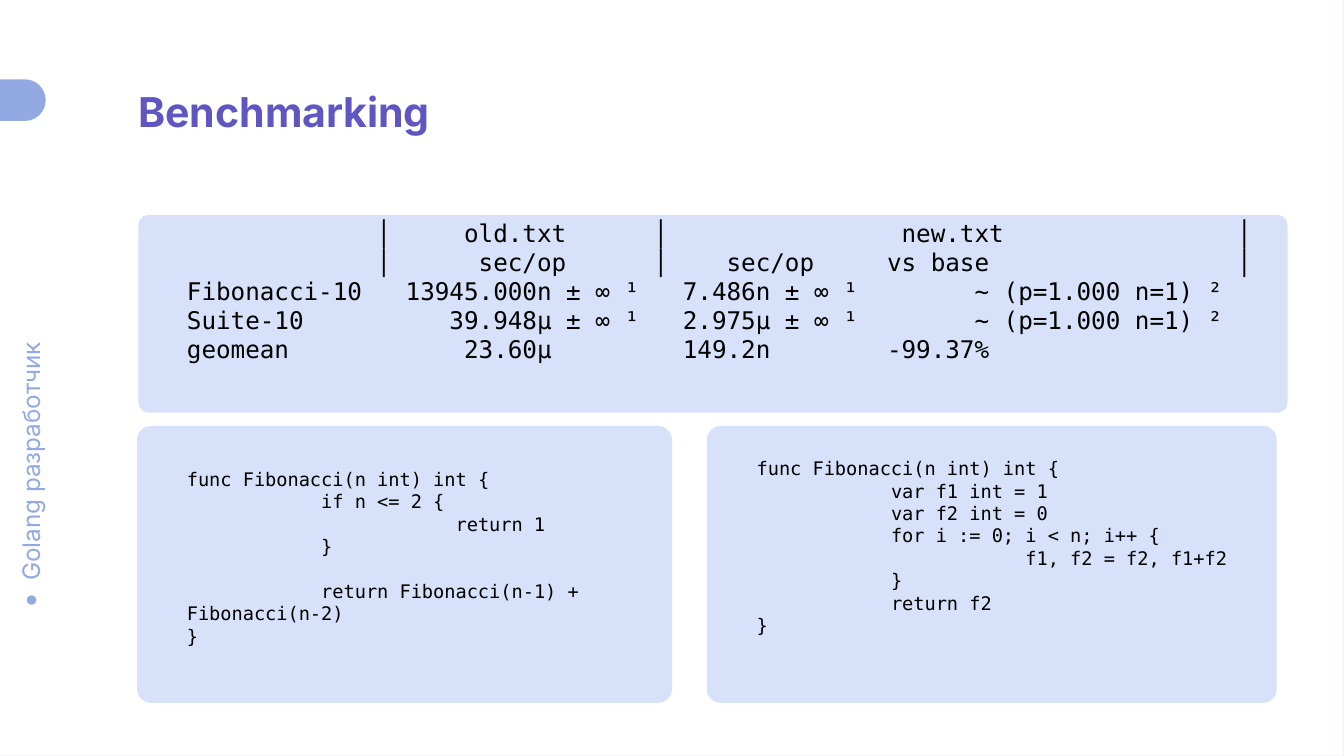
from lxml.etree import SubElement
from pptx import Presentation
from pptx.dml.color import RGBColor
from pptx.enum.shapes import MSO_SHAPE
from pptx.enum.text import MSO_ANCHOR, PP_ALIGN
from pptx.oxml.ns import qn
from pptx.util import Inches, Pt

PURPLE, PERIWINKLE, PANEL = "6056C2", "92A9E2", "D7E1F9"
PAGE, WHITE, BLACK = "F1F4FF", "FFFFFF", "000000"
TITLE_FORMAT = {"name": "Inter", "size": Pt(22), "bold": True}
SIDE_FORMAT = {"name": "Inter", "size": Pt(13), "bold": False}
RESULT_FORMAT = {"name": "DejaVu Sans Mono", "size": Pt(13), "bold": False}
CODE_FORMAT = {"name": "DejaVu Sans Mono", "size": Pt(10), "bold": False}
BLANK_LINE = Pt(12)
TAB_STOPS = (1, 2)

RESULTS = """\
             │     old.txt      │                new.txt                │
             │      sec/op      │    sec/op     vs base                 │
Fibonacci-10   13945.000n ± ∞ ¹   7.486n ± ∞ ¹        ~ (p=1.000 n=1) ²
Suite-10          39.948µ ± ∞ ¹   2.975µ ± ∞ ¹        ~ (p=1.000 n=1) ²
geomean            23.60µ         149.2n        -99.37%"""

RECURSIVE_CODE = """\
func Fibonacci(n int) int {
\tif n <= 2 {
\t\treturn 1
\t}

\treturn Fibonacci(n-1) + Fibonacci(n-2)
}"""

ITERATIVE_CODE = """\
func Fibonacci(n int) int {
\tvar f1 int = 1
\tvar f2 int = 0
\tfor i := 0; i < n; i++ {
\t\tf1, f2 = f2, f1+f2
\t}
\treturn f2
}"""


def paint(color_format, color):
    """Apply a hex colour to a colour format."""
    color_format.rgb = RGBColor.from_string(color)


def set_attributes(target, values):
    """Set every attribute named in a dict."""
    for name, value in values.items():
        setattr(target, name, value)


def set_frame(frame, anchor, left, top, right, bottom):
    """Set wrapping, anchor and margins in inches."""
    set_attributes(frame, {
        "word_wrap": True, "vertical_anchor": anchor,
        "margin_left": Inches(left), "margin_top": Inches(top),
        "margin_right": Inches(right), "margin_bottom": Inches(bottom),
    })


def add_tab_stops(paragraph):
    """Add the left tab stops that indent code."""
    stops = SubElement(paragraph._p.get_or_add_pPr(), qn("a:tabLst"))
    for position in TAB_STOPS:
        SubElement(stops, qn("a:tab"), pos=str(Inches(position)), algn="l")


def write(paragraph, text, font_format, color):
    """Write one left-aligned run of formatted text."""
    paragraph.alignment = PP_ALIGN.LEFT
    run = paragraph.add_run()
    run.text = text
    set_attributes(run.font, font_format)
    paint(run.font.color, color)


def add_block(slide, kind, box, color, corner=None):
    """Add a flat filled shape with no outline."""
    block = slide.shapes.add_shape(kind, *map(Inches, box))
    block.shadow.inherit = False
    block.fill.solid()
    paint(block.fill.fore_color, color)
    block.line.fill.background()
    if corner is not None:
        block.adjustments[0] = corner
    return block


def add_panel(slide, box, listing, font_format, top):
    """Add a rounded panel holding a monospaced listing."""
    panel = add_block(slide, MSO_SHAPE.ROUNDED_RECTANGLE, box, PANEL, 0.05)
    frame = panel.text_frame
    set_frame(frame, MSO_ANCHOR.TOP, 0.34, top, 0.1, 0)
    paragraph, gap = frame.paragraphs[0], None
    for number, line in enumerate(listing.split("\n")):
        if not line:
            gap = BLANK_LINE
            continue
        if number:
            paragraph = frame.add_paragraph()
        if line.startswith("\t"):
            add_tab_stops(paragraph)
        paragraph.space_before, gap = gap, None
        write(paragraph, line, font_format, BLACK)


def add_side_label(slide, text):
    """Add the vertical course label and its dot."""
    label = slide.shapes.add_textbox(*map(Inches, (-0.77, 3.21, 2, 0.42)))
    label.rotation = 270
    set_frame(label.text_frame, MSO_ANCHOR.TOP, 0.1, 0.1, 0, 0.1)
    write(label.text_frame.paragraphs[0], text, SIDE_FORMAT, PERIWINKLE)
    add_block(slide, MSO_SHAPE.OVAL, (0.2, 4.43, 0.07, 0.07), PERIWINKLE)


def set_title(slide, text):
    """Place and fill the title placeholder in front of the page."""
    title = slide.shapes.title
    place = dict(zip(("left", "top", "width", "height"),
                     map(Inches, (0.93, 0.59, 6.12, 0.47))))
    set_attributes(title, place)
    set_frame(title.text_frame, MSO_ANCHOR.TOP, 0.1, 0.05, 0.1, 0.05)
    write(title.text_frame.paragraphs[0], text, TITLE_FORMAT, PURPLE)
    title.element.getparent().append(title.element)


def main():
    """Build the benchmarking slide."""
    deck = Presentation()
    deck.slide_width = Inches(10)
    deck.slide_height = deck.slide_width * 9 // 16
    slide = deck.slides.add_slide(deck.slide_layouts[5])
    slide.background.fill.solid()
    paint(slide.background.fill.fore_color, PAGE)
    add_block(slide, MSO_SHAPE.RECTANGLE, (0, 0, 9.99, 5.62), WHITE)
    add_side_label(slide, "Golang разработчик")
    add_block(slide, MSO_SHAPE.ROUNDED_RECTANGLE,
              (-0.38, 0.59, 0.72, 0.31), PERIWINKLE, 0.5)
    set_title(slide, "Benchmarking")
    add_panel(slide, (1.03, 1.6, 8.55, 1.47), RESULTS, RESULT_FORMAT, 0)
    add_panel(slide, (5.26, 3.17, 4.24, 2.06), ITERATIVE_CODE, CODE_FORMAT, 0.2)
    add_panel(slide, (1.02, 3.17, 3.98, 2.06), RECURSIVE_CODE, CODE_FORMAT, 0.28)
    deck.save("out.pptx")


if __name__ == "__main__":
    main()
